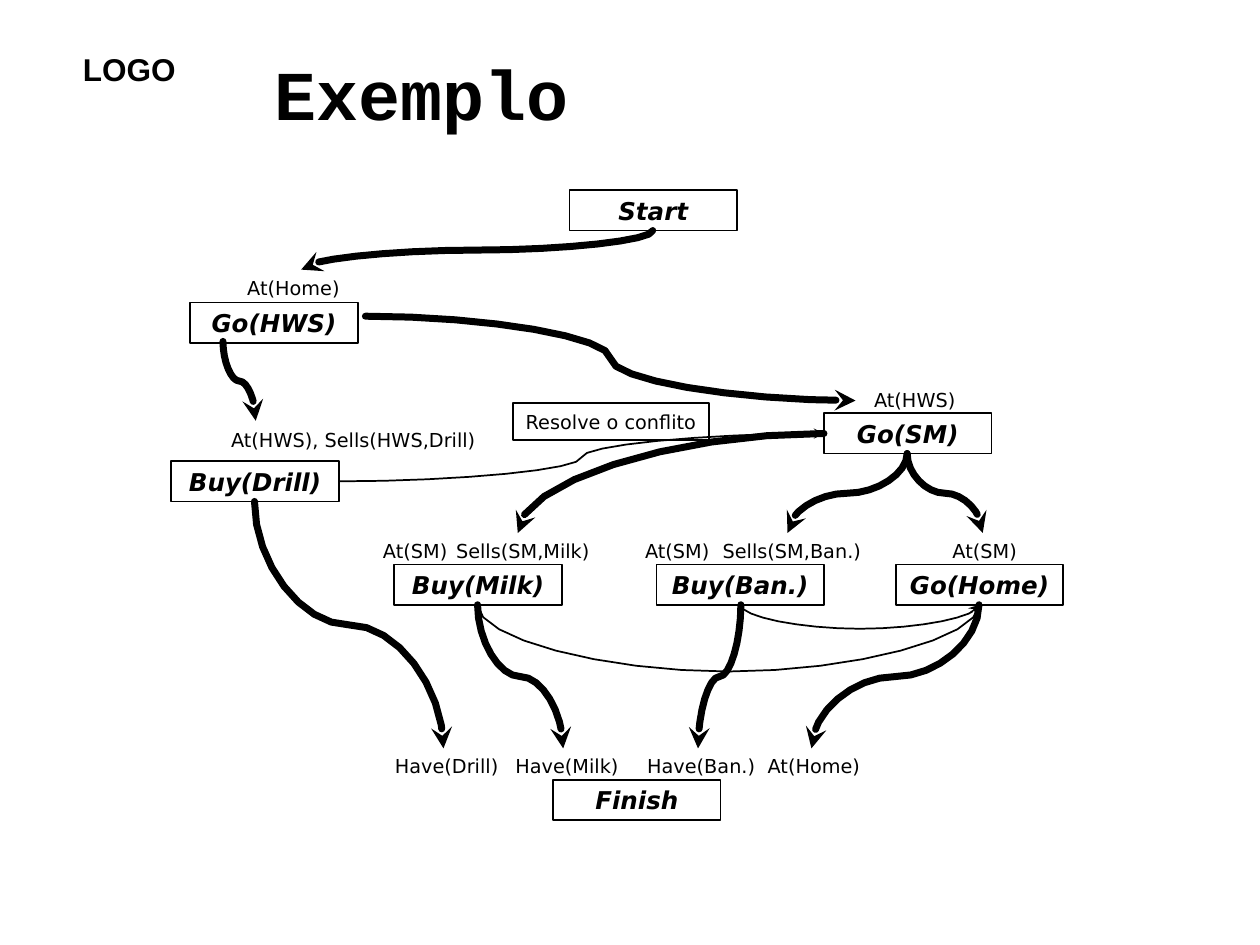
from lxml import etree
from pptx import Presentation
from pptx.dml.color import RGBColor
from pptx.enum.shapes import MSO_SHAPE
from pptx.enum.text import MSO_ANCHOR, PP_ALIGN
from pptx.oxml.ns import qn
from pptx.util import Inches, Pt

RECT = MSO_SHAPE.RECTANGLE
MIDDLE, TOP = MSO_ANCHOR.MIDDLE, MSO_ANCHOR.TOP
LEFT, CENTER = PP_ALIGN.LEFT, PP_ALIGN.CENTER
COLORS = {"ink": "000000", "paper": "FFFFFF"}
INK = RGBColor.from_string(COLORS["ink"])


def add_text(sp, text, size=11, font="DejaVu Sans", bold=False, italic=False,
             align=CENTER, anchor=TOP, wrap=False):
    tf = sp.text_frame
    tf.word_wrap = wrap
    tf.vertical_anchor = anchor
    p = tf.paragraphs[0]
    p.alignment = align
    r = p.add_run()
    r.text = text
    r.font.name, r.font.size = font, Pt(size)
    r.font.bold, r.font.italic = bold, italic
    r.font.color.rgb = INK


def add_curve(x, y, w, h, segments, weight, steps=8):
    """Draw cubic segments, given in units of w and h, as an arrow from (x, y)."""
    points = []
    for a, b, c, d in segments:
        for i in range(steps + 1):
            t = i / steps
            u, v = [(1 - t) ** 3 * a[k] + 3 * (1 - t) ** 2 * t * b[k]
                    + 3 * (1 - t) * t ** 2 * c[k] + t ** 3 * d[k] for k in (0, 1)]
            points.append((Inches(x + u * w), Inches(y + v * h)))
    fb = s.shapes.build_freeform(*points[0])
    fb.add_line_segments(points[1:], close=False)
    sp = fb.convert_to_shape()
    sp.shadow.inherit = False
    sp.fill.background()
    sp.line.color.rgb = INK
    sp.line.width = Pt(weight)
    ln = sp.line._get_or_add_ln()
    ln.set("cap", "rnd")
    etree.SubElement(ln, qn("a:round"))
    etree.SubElement(ln, qn("a:tailEnd"), type="stealth")


prs = Presentation()
prs.slide_width, prs.slide_height = Inches(10), Inches(7.5)
s = prs.slides.add_slide(prs.slide_layouts[6])
s.background.fill.solid()
s.background.fill.fore_color.rgb = RGBColor.from_string(COLORS["paper"])

# Heading
sp = s.shapes.add_textbox(Inches(0.56), Inches(0.35), Inches(0.94), Inches(0.4))
add_text(sp, "LOGO", size=18, font="Arial", bold=True, align=LEFT)
sp = s.shapes.add_textbox(Inches(2.08), Inches(0.25), Inches(7.42), Inches(0.97))
add_text(sp, "Exemplo", size=40, font="Courier New", bold=True, align=LEFT,
         anchor=MIDDLE, wrap=True)

# Plan steps and the note on the conflict
STEP = {"size": 14, "bold": True, "italic": True}
STEP_W, STEP_H = 1.33, 0.32
ACTION_Y, GOAL_Y = 4.48, 5.94
boxes = [
    ("Start", 4.52, 1.51, STEP_W, STEP_H, STEP),
    ("Go(HWS)", 1.51, 2.4, STEP_W, STEP_H, STEP),
    ("Buy(Drill)", 1.36, 3.66, STEP_W, STEP_H, STEP),
    ("Go(SM)", 6.54, 3.28, STEP_W, STEP_H, STEP),
    ("Buy(Milk)", 3.13, ACTION_Y, STEP_W, STEP_H, STEP),
    ("Buy(Ban.)", 5.21, ACTION_Y, STEP_W, STEP_H, STEP),
    ("Go(Home)", 7.11, ACTION_Y, STEP_W, STEP_H, STEP),
    ("Finish", 4.39, 6.19, STEP_W, STEP_H, STEP),
    ("Resolve o conflito", 4.07, 3.2, 1.56, 0.29, {}),
]
for text, x, y, w, h, style in boxes:
    sp = s.shapes.add_shape(RECT, Inches(x), Inches(y), Inches(w), Inches(h))
    sp.shadow.inherit = False
    sp.fill.background()
    sp.line.color.rgb = INK
    sp.line.width = Pt(1)
    add_text(sp, text, anchor=MIDDLE, **style)

# Preconditions above the steps
LABEL_H = 0.29
COND_Y = ACTION_Y - 0.25
labels = [
    ("At(Home)", 1.85, 2.14, 0.96),
    ("At(HWS), Sells(HWS,Drill)", 1.31, 3.35, 2.99),
    ("At(HWS)", 6.82, 3.03, 0.88),
    ("At(SM)", 2.92, COND_Y, 0.75),
    ("Sells(SM,Milk)", 3.5, COND_Y, 1.3),
    ("At(SM)", 5, COND_Y, 0.75),
    ("Sells(SM,Ban.)", 5.61, COND_Y, 1.35),
    ("At(SM)", 7.44, COND_Y, 0.75),
    ("Have(Drill)", 3.02, GOAL_Y, 1.05),
    ("Have(Milk)", 3.98, GOAL_Y, 1.04),
    ("Have(Ban.)", 5.02, GOAL_Y, 1.09),
    ("At(Home)", 5.98, GOAL_Y, 0.96),
]
for text, x, y, w in labels:
    sp = s.shapes.add_textbox(Inches(x), Inches(y), Inches(w), Inches(LABEL_H))
    add_text(sp, text)

# Curve forms: S across, S down, quarter turn, sagging arc
ACROSS = [[(0, 0), (0.25, 0), (0.5, 0.25), (0.5, 0.5)],
          [(0.5, 0.5), (0.5, 0.75), (0.75, 1), (1, 1)]]
DOWN = [[(v, u) for u, v in segment] for segment in ACROSS]
TURN = [[(0, 0), (0.5, 0), (1, 0.5), (1, 1)]]
SAG = [[(0, 0), (0, 0.5), (0.25, 1), (0.5, 1)],
       [(0.5, 1), (0.75, 1), (1, 0.5), (1, 0)]]

# Causal links are thick, ordering links are thin
THICK, THIN = 4, 1
curves = [
    (5.18, 1.83, -2.79, 0.31, DOWN, THICK),
    (1.77, 2.71, 0.26, 0.63, DOWN, THICK),
    (7.2, 3.6, 0.6, 0.63, DOWN, THICK),
    (6.54, 3.44, -2.43, 0.79, TURN, THICK),
    (7.2, 3.6, -0.95, 0.63, DOWN, THICK),
    (5.88, 4.8, -0.34, 1.14, DOWN, THICK),
    (3.79, 4.8, 0.68, 1.14, DOWN, THICK),
    (7.77, 4.8, -1.33, 1.14, DOWN, THICK),
    (2.9, 2.51, 3.89, 0.67, ACROSS, THICK),
    (2.02, 3.98, 1.5, 1.96, DOWN, THICK),
    (3.79, 4.8, 3.98, 0.53, SAG, THIN),
    (5.88, 4.8, 1.89, 0.19, SAG, THIN),
    (2.69, 3.82, 3.85, -0.38, ACROSS, THIN),
]
for curve in curves:
    add_curve(*curve)

prs.save("out.pptx")
